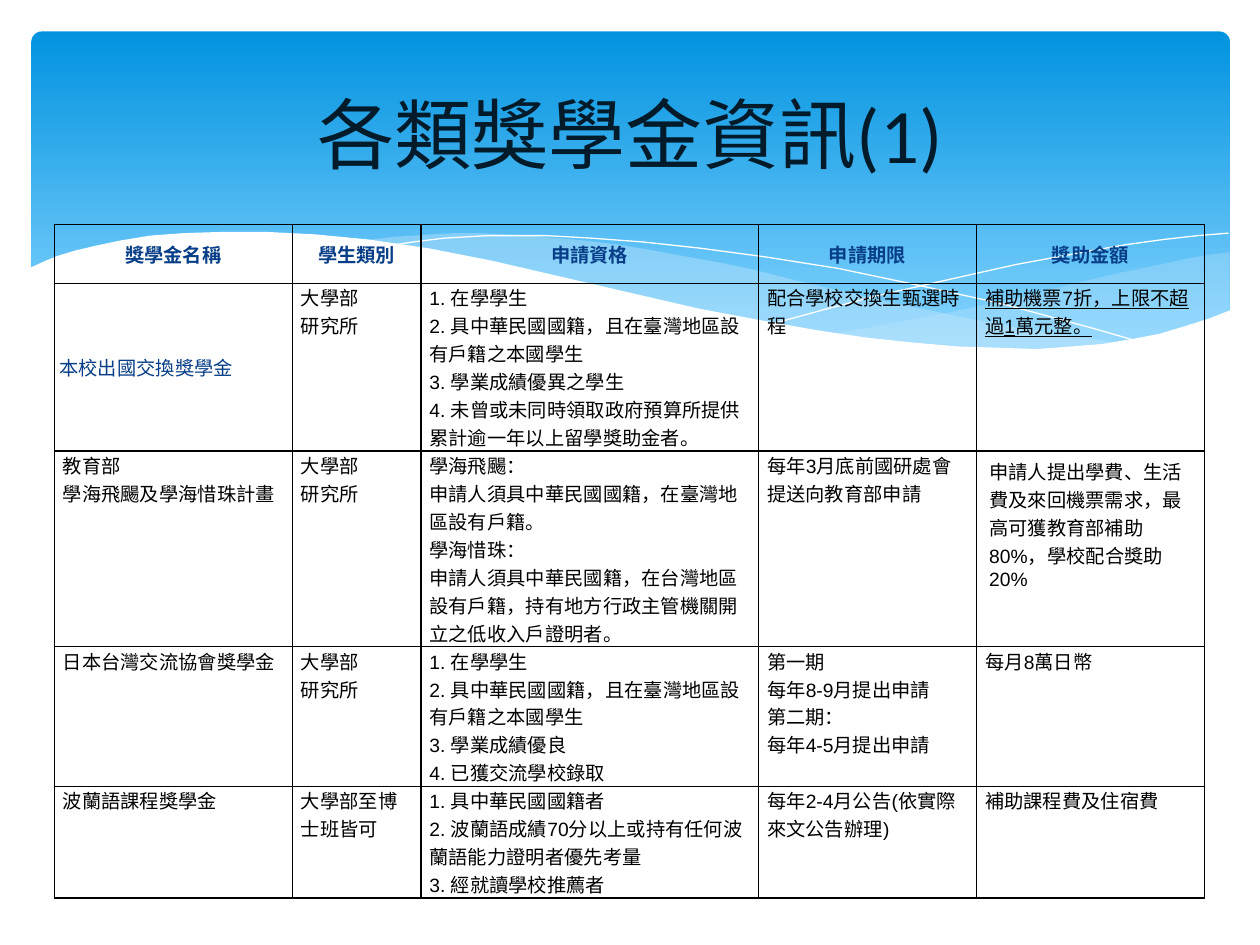
from dataclasses import dataclass
from lxml.etree import SubElement
from pptx import Presentation
from pptx.dml.color import RGBColor
from pptx.enum.shapes import MSO_SHAPE
from pptx.enum.text import MSO_ANCHOR, PP_ALIGN
from pptx.oxml.ns import qn
from pptx.util import Pt


@dataclass(frozen=True)
class Theme:
    sky_dark: str = "0293E0"
    sky_light: str = "83D3FE"
    wave: str = "C6E7FC"
    white: str = "FFFFFF"
    ink: str = "000000"
    accent: str = "073E87"
    title: str = "021B2B"
    title_font: str = "Calibri"
    body_font: str = "Arial"
    title_size: int = 44
    body_size: int = 11


theme = Theme()


def color(name):
    return RGBColor.from_string(name)


def add_outline(slide, points, closed):
    builder = slide.shapes.build_freeform(*points[0], scale=Pt(0.72))
    builder.add_line_segments(points[1:], close=closed)
    outline = builder.convert_to_shape()
    outline.shadow.inherit = False
    return outline


deck = Presentation()
deck.slide_width, deck.slide_height = Pt(720), Pt(540)
slide = deck.slides.add_slide(deck.slide_layouts[5])

sky = slide.shapes.add_shape(MSO_SHAPE.ROUNDED_RECTANGLE, Pt(18), Pt(18), Pt(684.7), Pt(194.4))
sky.adjustments[0] = 0.03
sky.shadow.inherit = False
sky.line.fill.background()
sky.fill.gradient()
sky.fill.gradient_angle = 270
for stop, position, shade in zip(sky.fill.gradient_stops, (0, 0.9), (theme.sky_dark, theme.sky_light)):
    stop.position = position
    stop.color.rgb = color(shade)

right_wave = [
    (976, 200), (948, 204), (921, 210), (891, 216), (861, 223), (805, 237), (753, 248),
    (706, 257), (661, 265), (691, 269), (719, 272), (745, 275), (769, 277), (803, 278),
    (835, 277), (863, 275), (889, 272), (913, 267), (935, 262), (949, 257), (963, 252), (976, 247),
]
middle_wave = [
    (893, 273), (866, 269), (837, 265), (807, 260), (775, 254), (741, 247), (706, 240),
    (668, 231), (629, 222), (598, 214), (569, 208), (541, 203), (514, 198), (489, 194),
    (465, 191), (442, 189), (420, 187), (399, 186), (380, 185), (361, 185), (344, 186),
    (313, 188), (286, 191), (323, 196), (362, 203), (404, 211), (449, 222), (491, 232),
    (530, 240), (566, 248), (601, 255), (634, 261), (665, 266), (695, 270), (722, 274),
    (748, 276), (773, 277), (796, 278), (828, 278), (857, 277), (876, 275),
]
white_wave = [
    (977, 246), (959, 253), (940, 259), (920, 265), (899, 269), (875, 273), (850, 275),
    (823, 277), (793, 276), (761, 275), (726, 272), (688, 268), (648, 262), (603, 254),
    (555, 245), (503, 233), (447, 220), (391, 207), (340, 197), (292, 190), (250, 186),
    (211, 184), (177, 184), (146, 185), (119, 187), (95, 191), (76, 195), (59, 199),
    (46, 203), (36, 207), (23, 213), (23, 329), (977, 329),
]
falling_line = [
    (309, 195), (328, 192), (353, 189), (387, 187), (433, 187), (469, 189), (510, 192),
    (556, 197), (608, 204), (665, 213), (727, 226), (795, 241), (869, 261), (907, 272),
]
rising_line = [
    (613, 257), (653, 246), (695, 235), (748, 223), (806, 210), (866, 199), (895, 194),
    (924, 190), (951, 187), (975, 185),
]
layers = [
    (right_wave, theme.wave, 29),
    (middle_wave, theme.wave, 40),
    (falling_line, None, 100),
    (rising_line, None, 100),
    (white_wave, theme.white, 100),
]
for points, shade, opacity in layers:
    outline = add_outline(slide, points, shade is not None)
    if shade is None:
        outline.fill.background()
        outline.line.color.rgb = color(theme.white)
        outline.line.width = Pt(0)
        continue
    outline.line.fill.background()
    outline.fill.solid()
    outline.fill.fore_color.rgb = color(shade)
    if opacity < 100:
        tint = next(outline.element.iter(qn("a:srgbClr")))
        SubElement(tint, qn("a:alpha"), val=str(opacity * 1000))

rows = [
    ["獎學金名稱", "學生類別", "申請資格", "申請期限", "獎助金額"],
    [
        "本校出國交換獎學金",
        "大學部\v研究所",
        "1. 在學學生\v2. 具中華民國國籍，且在臺灣地區設有戶籍之本國學生\v"
        "3. 學業成績優異之學生\v4. 未曾或未同時領取政府預算所提供累計逾一年以上留學獎助金者。",
        "配合學校交換生甄選時程",
        "補助機票7折，上限不超過1萬元整。",
    ],
    [
        "教育部\v學海飛颺及學海惜珠計畫",
        "大學部\v研究所",
        "學海飛颺：\n申請人須具中華民國國籍，在臺灣地區設有戶籍。\n學海惜珠：\n"
        "申請人須具中華民國籍，在台灣地區設有戶籍，持有地方行政主管機關開立之低收入戶證明者。",
        "每年3月底前國研處會提送向教育部申請",
        "申請人提出學費、生活費及來回機票需求，最高可獲教育部補助 80%，學校配合獎助20%",
    ],
    [
        "日本台灣交流協會獎學金",
        "大學部\n研究所",
        "1. 在學學生\v2. 具中華民國國籍，且在臺灣地區設有戶籍之本國學生\n"
        "3. 學業成績優良\n4. 已獲交流學校錄取",
        "第一期\n每年8-9月提出申請\n第二期：\n每年4-5月提出申請",
        "每月8萬日幣",
    ],
    [
        "波蘭語課程獎學金",
        "大學部至博士班皆可",
        "1. 具中華民國國籍者\n2. 波蘭語成績70分以上或持有任何波蘭語能力證明者優先考量\n"
        "3. 經就讀學校推薦者",
        "每年2-4月公告(依實際來文公告辦理)",
        "補助課程費及住宿費",
    ],
]
column_widths = [136.1, 73.4, 193, 124.6, 130.3]
row_heights = [33.8, 91.4, 106.6, 76.3, 61.2]
special_margins = {(1, 0): (2.9, 2.9), (2, 4): (7.2, 3.6)}

frame = slide.shapes.add_table(
    len(rows), len(column_widths), Pt(31), Pt(128.2), Pt(sum(column_widths)), Pt(sum(row_heights))
)
table = frame.table
table.first_row = table.horz_banding = False
for column, width in zip(table.columns, column_widths):
    column.width = Pt(width)
for row, height in zip(table.rows, row_heights):
    row.height = Pt(height)

for row_index, texts in enumerate(rows):
    for column_index, text in enumerate(texts):
        cell = table.cell(row_index, column_index)
        place = (row_index, column_index)
        header = row_index == 0
        highlighted = header or place == (1, 0)
        side, edge = special_margins.get(place, (4.9, 0))
        cell.margin_left = cell.margin_right = Pt(side)
        cell.margin_top = cell.margin_bottom = Pt(edge)
        cell.vertical_anchor = MSO_ANCHOR.MIDDLE if highlighted else MSO_ANCHOR.TOP
        properties = cell._tc.get_or_add_tcPr()
        for border in ("a:lnL", "a:lnR", "a:lnT", "a:lnB"):
            line = SubElement(properties, qn(border), w=str(Pt(1)))
            SubElement(SubElement(line, qn("a:solidFill")), qn("a:srgbClr"), val=theme.ink)
        cell.fill.background()
        cell.text = text
        for para in cell.text_frame.paragraphs:
            para.alignment = PP_ALIGN.CENTER if header else PP_ALIGN.LEFT
            para.font.name = theme.body_font
            para.font.size = Pt(theme.body_size)
            para.font.bold = header
            para.font.underline = place == (1, 4)
            para.font.color.rgb = color(theme.accent if highlighted else theme.ink)

title = slide.shapes.title
title.left, title.top, title.width, title.height = Pt(36), Pt(26.6), Pt(648), Pt(98.6)
title.text_frame.text = "各類獎學金資訊(1)"
title.text_frame.vertical_anchor = MSO_ANCHOR.MIDDLE
para = title.text_frame.paragraphs[0]
para.alignment = PP_ALIGN.CENTER
para.font.name = theme.title_font
para.font.size = Pt(theme.title_size)
para.font.color.rgb = color(theme.title)
title.element.getparent().append(title.element)

deck.save("out.pptx")
